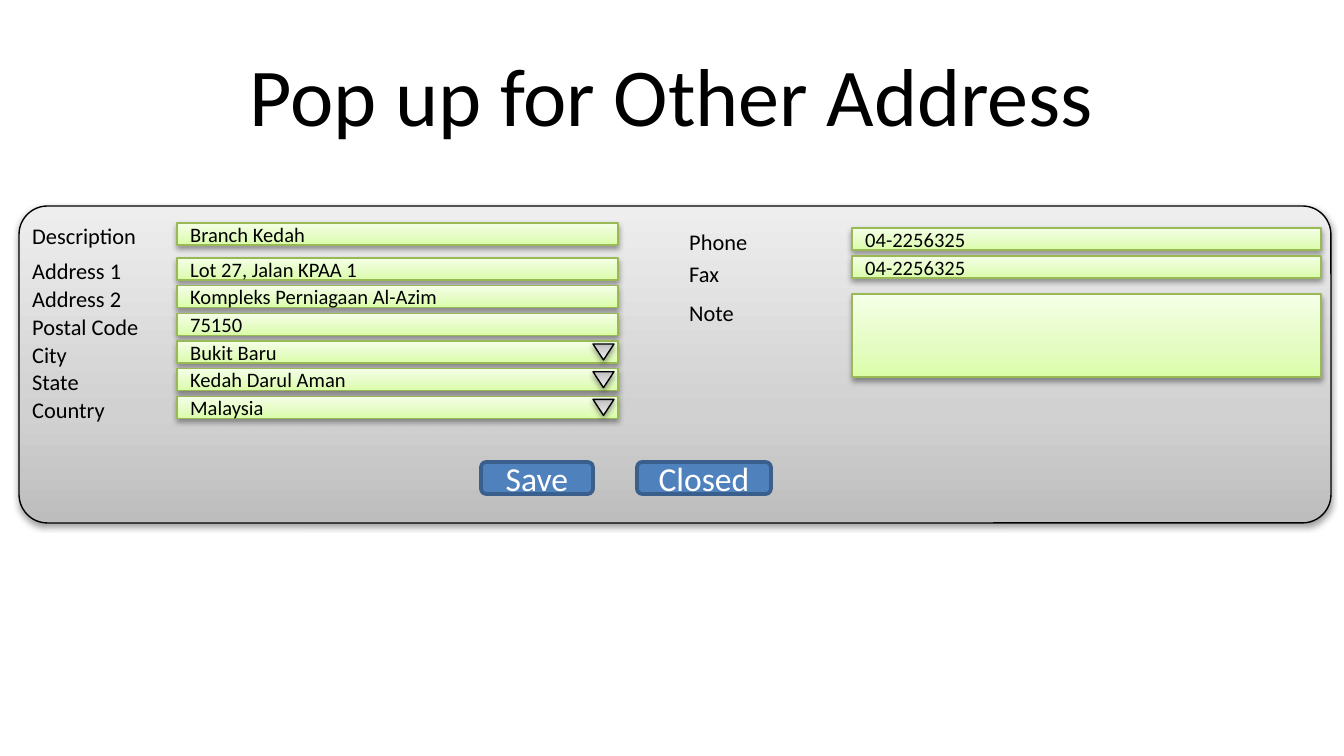
import copy

import pptx
import pptx.dml.color
import pptx.enum.shapes
import pptx.enum.text
import pptx.oxml
import pptx.oxml.ns
import pptx.util

SHAPES = pptx.enum.shapes.MSO_SHAPE
ALIGN = pptx.enum.text.PP_ALIGN
MIDDLE = pptx.enum.text.MSO_ANCHOR.MIDDLE
PX = 914400 / 134.4

THEME = {
    "font": "Calibri",
    "ink": "000000",
    "button": "4F81BD",
    "button_line": "3A5F8C",
    "button_text": "FFFFFF",
    "field_line": "98B955",
    "gray": [(0, "BDBDBD"), (0.35, "D1D1D1"), (1, "EEEEEE")],
    "green": [(0, "DAFDA7"), (0.35, "E4FCC2"), (1, "F5FFE7")],
    "title_size": 44,
    "label_size": 12,
    "field_size": 11,
    "button_size": 18,
}

TITLE = "Pop up for Other Address"
# label, label width, value, has a drop-down arrow
ADDRESS_ROWS = [
    ("Description", 132, "Branch Kedah", False),
    ("Address 1", 130, "Lot 27, Jalan KPAA 1", False),
    ("Address 2", 130, "Kompleks Perniagaan Al-Azim", False),
    ("Postal Code", 134, "75150", False),
    ("City", 62, "Bukit Baru", True),
    ("State", 74, "Kedah Darul Aman", True),
    ("Country", 112, "Malaysia", True),
]
# label, label width, label top, value, field top, field height
CONTACT_ROWS = [
    ("Phone", 95, 222, "04-2256325", 228, 22),
    ("Fax", 63, 254, "04-2256325", 256, 22),
    ("Note", 73, 293, "", 294, 83),
]
BUTTONS = [("Save", 481, 112), ("Closed", 637, 134)]  # text, left, width

ADDRESS_LABEL_LEFT, ADDRESS_FIELD_LEFT, ADDRESS_FIELD_WIDTH = 19, 177, 441
CONTACT_LABEL_LEFT, CONTACT_FIELD_LEFT, CONTACT_FIELD_WIDTH = 676, 852, 469
DESCRIPTION_TOP, ADDRESS_TOP, ROW_PITCH = 223, 258, 27.7
FIELD_HEIGHT, LABEL_HEIGHT, LABEL_RISE = 22, 40, 7

SHADOW = (
    '<a:outerShdw %s blurRad="39370" dist="20320" dir="5400000" rotWithShape="0">'
    '<a:srgbClr val="000000"><a:alpha val="38000"/></a:srgbClr></a:outerShdw>'
    % pptx.oxml.ns.nsdecls("a")
)


def color(name):
    return pptx.dml.color.RGBColor.from_string(name)


def box(*lengths):
    return [pptx.util.Emu(round(length * PX)) for length in lengths]


def write(shape, text, size, ink=THEME["ink"], align=ALIGN.LEFT):
    shape.text_frame.text = text
    paragraph = shape.text_frame.paragraphs[0]
    paragraph.alignment = align
    paragraph.font.name = THEME["font"]
    paragraph.font.size = pptx.util.Pt(size)
    paragraph.font.color.rgb = color(ink)


def add_outlined(slide, kind, place, line, width):
    shape = slide.shapes.add_shape(kind, *box(*place))
    shape.shadow.inherit = False
    shape.line.color.rgb = color(line)
    shape.line.width = pptx.util.Pt(width)
    shape.text_frame.vertical_anchor = MIDDLE
    return shape


def add_raised(slide, kind, place, stops, line):
    """Add a shape with a three-stop gradient and a soft shadow below."""
    shape = add_outlined(slide, kind, place, line, 0.75)
    shape.fill.gradient()
    shape.fill.gradient_angle = 90
    properties = shape._element.spPr
    stop_list = properties.find(".//" + pptx.oxml.ns.qn("a:gsLst"))
    stop_list.append(copy.deepcopy(stop_list[0]))
    for stop, (position, name) in zip(shape.fill.gradient_stops, stops):
        stop.position = position
        stop.color.rgb = color(name)
    effects = properties.find(pptx.oxml.ns.qn("a:effectLst"))
    effects.append(pptx.oxml.parse_xml(SHADOW))
    return shape


def add_label(slide, text, left, top, width):
    label = slide.shapes.add_textbox(*box(left, top, width, LABEL_HEIGHT))
    label.text_frame.word_wrap = False
    label.text_frame.auto_size = pptx.enum.text.MSO_AUTO_SIZE.SHAPE_TO_FIT_TEXT
    write(label, text, THEME["label_size"])


def add_field(slide, text, *place):
    field = add_raised(slide, SHAPES.RECTANGLE, place, THEME["green"], THEME["field_line"])
    if text:
        write(field, text, THEME["field_size"])


def add_arrow(slide, field_top):
    place = (593, field_top + 3, 21, 16)
    arrow = add_raised(slide, SHAPES.ISOSCELES_TRIANGLE, place, THEME["gray"], THEME["ink"])
    arrow._element.spPr.xfrm.set("flipV", "1")


def main():
    presentation = pptx.Presentation()
    presentation.slide_width, presentation.slide_height = box(1344, 756)
    slide = presentation.slides.add_slide(presentation.slide_layouts[5])

    title = slide.shapes.title
    title.left, title.top, title.width, title.height = box(67, 31, 1210, 126)
    title.text_frame.vertical_anchor = MIDDLE
    write(title, TITLE, THEME["title_size"], align=ALIGN.CENTER)

    panel = add_raised(slide, SHAPES.ROUNDED_RECTANGLE, (19, 206, 1312, 317),
                       THEME["gray"], THEME["ink"])
    panel.adjustments[0] = 0.09

    for index, (label, width, value, has_arrow) in enumerate(ADDRESS_ROWS):
        top = ADDRESS_TOP + (index - 1) * ROW_PITCH if index else DESCRIPTION_TOP
        add_label(slide, label, ADDRESS_LABEL_LEFT, top - LABEL_RISE, width)
        add_field(slide, value, ADDRESS_FIELD_LEFT, top, ADDRESS_FIELD_WIDTH, FIELD_HEIGHT)
        if has_arrow:
            add_arrow(slide, top)

    for label, width, label_top, value, top, height in CONTACT_ROWS:
        add_label(slide, label, CONTACT_LABEL_LEFT, label_top, width)
        add_field(slide, value, CONTACT_FIELD_LEFT, top, CONTACT_FIELD_WIDTH, height)

    for text, left, width in BUTTONS:
        button = add_outlined(slide, SHAPES.ROUNDED_RECTANGLE, (left, 462, width, 32),
                              THEME["button_line"], 2)
        button.fill.solid()
        button.fill.fore_color.rgb = color(THEME["button"])
        write(button, text, THEME["button_size"], THEME["button_text"], ALIGN.CENTER)

    presentation.save("out.pptx")


if __name__ == "__main__":
    main()
